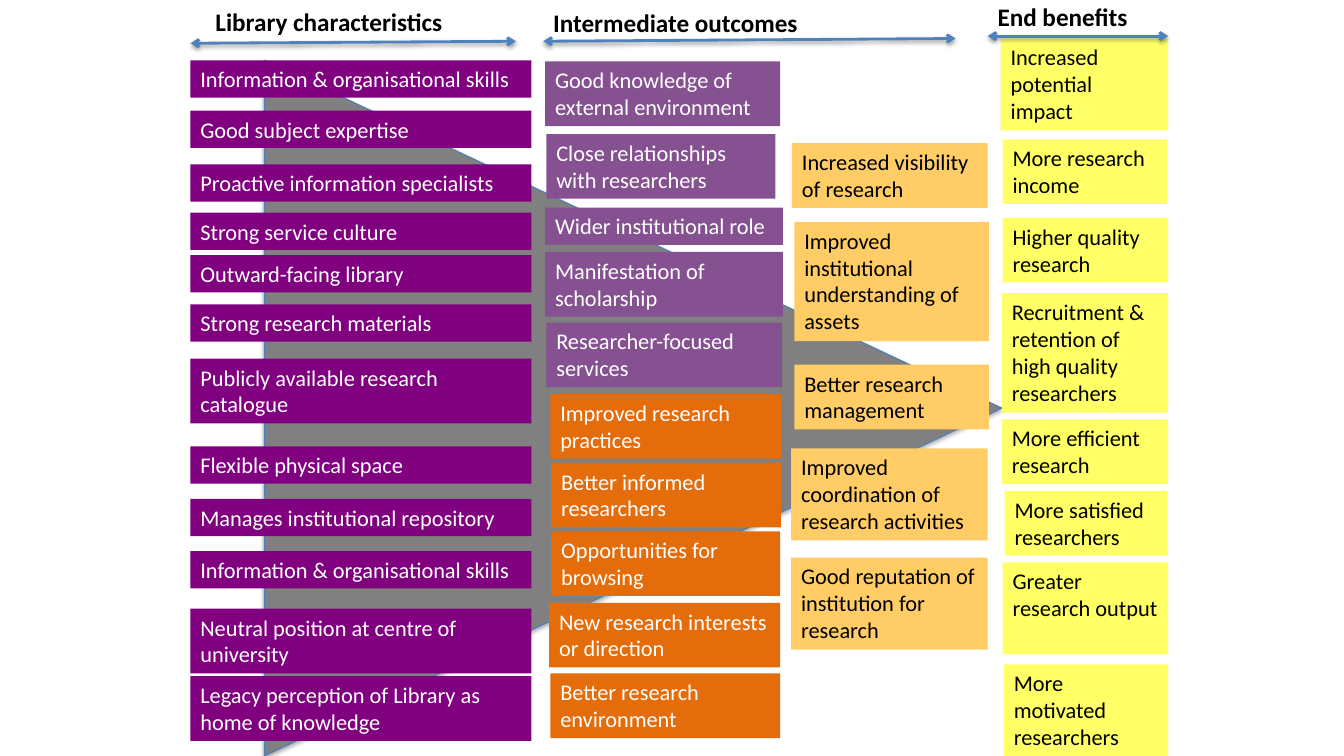
from pptx import Presentation
from pptx.dml.color import RGBColor
from pptx.enum.shapes import MSO_CONNECTOR as LINE, MSO_SHAPE as SHAPE
from pptx.enum.text import MSO_ANCHOR as ANCHOR, MSO_AUTO_SIZE as FIT, PP_ALIGN as ALIGN
from pptx.oxml import parse_xml
from pptx.oxml.ns import nsdecls
from pptx.util import Cm, Pt

PURPLE = RGBColor(0x80, 0x00, 0x80)
VIOLET = RGBColor(0x86, 0x51, 0x91)
ORANGE = RGBColor(0xE4, 0x6C, 0x0A)
AMBER = RGBColor(0xFF, 0xCC, 0x66)
YELLOW = RGBColor(0xFF, 0xFF, 0x66)
GREY = RGBColor(0x80, 0x80, 0x80)
OUTLINE = RGBColor(0x4B, 0x7E, 0xBC)
BLUE = RGBColor(0x4F, 0x81, 0xBD)
WHITE = RGBColor(0xFF, 0xFF, 0xFF)
BLACK = RGBColor(0x00, 0x00, 0x00)

LIBRARY_LEFT, LIBRARY_WIDTH = 4.8, 8.59
LIBRARY = [
    ("Information & organisational skills", 1.52, 1),
    ("Good subject expertise", 2.79, 1),
    ("Proactive information specialists", 4.14, 1),
    ("Strong service culture", 5.36, 1),
    ("Outward-facing library", 6.43, 1),
    ("Strong research materials", 7.67, 1),
    ("Publicly available research catalogue", 9.04, 2),
    ("Flexible physical space", 11.25, 1),
    ("Manages institutional repository", 12.57, 1),
    ("Information & organisational skills", 13.89, 1),
    ("Neutral position at centre of university", 15.34, 2),
    ("Legacy perception of Library as home of knowledge", 17.04, 2),
]
RELATIONSHIPS = [
    ("Good knowledge of external environment", 13.74, 1.55, 5.92, 2),
    ("Close relationships with researchers", 13.77, 3.38, 5.77, 2),
    ("Wider institutional role", 13.74, 5.23, 5.99, 1),
    ("Manifestation of scholarship", 13.74, 6.35, 5.99, 2),
    ("Researcher-focused services", 13.77, 8.13, 5.94, 2),
]
PRACTICES = [
    ("Improved research practices", 13.87, 9.93, 5.82, 2),
    ("Better informed researchers", 13.89, 11.66, 5.79, 2),
    ("Opportunities for browsing", 13.89, 13.39, 5.77, 2),
    ("New research interests or direction", 13.84, 15.19, 5.82, 2),
    ("Better research environment", 13.87, 16.97, 5.79, 2),
]
INSTITUTION = [
    ("Increased visibility of research", 19.96, 3.61, 4.93, 2),
    ("Improved institutional understanding of assets", 20.02, 5.59, 4.9, 4),
    ("Better research management", 20.02, 9.19, 4.9, 2),
    ("Improved coordination of research activities", 19.94, 11.3, 4.95, 3),
    ("Good reputation of institution for research", 19.94, 14.05, 4.95, 3),
]
BENEFITS = [
    ("Increased potential impact", 25.22, 0.97, 4.22, 3),
    ("More research income", 25.27, 3.51, 4.14, 2),
    ("Higher quality research", 25.27, 5.49, 4.17, 2),
    ("Recruitment & retention of high quality researchers", 25.25, 7.39, 4.19, 4),
    ("More efficient research", 25.25, 10.57, 4.19, 2),
    ("More satisfied researchers", 25.32, 12.37, 4.11, 2),
    ("Greater research output", 25.27, 14.17, 4.17, 3),
    ("More motivated researchers", 25.3, 16.74, 4.14, 3),
]
HEADINGS = [
    ("Library characteristics", 5.18, 0.03, 6.32),
    ("Intermediate outcomes", 13.69, 0.05, 6.78),
    ("End benefits", 24.89, -0.08, 3.84),
]
SPANS = [
    (4.8, 1.09, 13, 1.04),
    (13.69, 1.04, 24.08, 0.97),
    (24.89, 0.91, 29.44, 0.91),
]


class OutcomeMap:
    box_format = {"name": "Calibri", "size": Pt(16), "bold": False}
    heading_format = {"name": "Calibri", "size": Pt(18), "bold": True}
    first_line, next_line = 0.94, 0.69

    def __init__(self, slide):
        self.shapes = slide.shapes

    def set_text(self, frame, text, color, formats, wrap):
        frame_format = {"word_wrap": wrap, "auto_size": FIT.NONE, "vertical_anchor": ANCHOR.TOP}
        for name, value in frame_format.items():
            setattr(frame, name, value)
        paragraph = frame.paragraphs[0]
        paragraph.alignment = ALIGN.LEFT
        run = paragraph.add_run()
        run.text = text
        for name, value in formats.items():
            setattr(run.font, name, value)
        run.font.color.rgb = color

    def cast_shadow(self, shape, distance, opacity):
        shape._element.spPr.append(parse_xml(
            f'<a:effectLst {nsdecls("a")}>'
            f'<a:outerShdw blurRad="{Pt(3.1)}" dist="{Pt(distance)}" dir="5400000" rotWithShape="0">'
            f'<a:srgbClr val="000000"><a:alpha val="{opacity * 1000}"/></a:srgbClr>'
            '</a:outerShdw></a:effectLst>'))

    def triangle(self, left, top, width, height):
        funnel = self.shapes.add_shape(
            SHAPE.ISOSCELES_TRIANGLE, Cm(left), Cm(top), Cm(width), Cm(height))
        funnel.rotation = 90
        funnel.fill.solid()
        funnel.fill.fore_color.rgb = GREY
        funnel.line.color.rgb = OUTLINE
        funnel.line.width = Pt(0.75)
        self.cast_shadow(funnel, 1.8, 35)

    def box(self, text, left, top, width, lines, fill, color):
        height = self.first_line + self.next_line * (lines - 1)
        item = self.shapes.add_shape(SHAPE.RECTANGLE, Cm(left), Cm(top), Cm(width), Cm(height))
        item.shadow.inherit = False
        item.fill.solid()
        item.fill.fore_color.rgb = fill
        item.line.fill.background()
        self.set_text(item.text_frame, text, color, self.box_format, True)

    def heading(self, text, left, top, width):
        label = self.shapes.add_textbox(Cm(left), Cm(top), Cm(width), Cm(1.02))
        self.set_text(label.text_frame, text, BLACK, self.heading_format, False)

    def span(self, *ends):
        arrow = self.shapes.add_connector(LINE.STRAIGHT, *map(Cm, ends))
        arrow.line.color.rgb = BLUE
        arrow.line.width = Pt(2)
        for end in ("headEnd", "tailEnd"):
            arrow.line._get_or_add_ln().append(
                parse_xml(f'<a:{end} {nsdecls("a")} type="arrow"/>'))
        self.cast_shadow(arrow, 1.6, 38)


def main():
    deck = Presentation()
    deck.slide_width, deck.slide_height = Cm(33.87), Cm(19.05)
    outcomes = OutcomeMap(deck.slides.add_slide(deck.slide_layouts[6]))
    outcomes.triangle(7.19, 0.99, 17.53, 18.59)
    library = [(text, LIBRARY_LEFT, top, LIBRARY_WIDTH, lines) for text, top, lines in LIBRARY]
    groups = [
        (library, PURPLE, WHITE),
        (RELATIONSHIPS, VIOLET, WHITE),
        (PRACTICES, ORANGE, WHITE),
        (INSTITUTION, AMBER, BLACK),
        (BENEFITS, YELLOW, BLACK),
    ]
    for items, fill, color in groups:
        for item in items:
            outcomes.box(*item, fill, color)
    for heading in HEADINGS:
        outcomes.heading(*heading)
    for ends in SPANS:
        outcomes.span(*ends)
    deck.save("out.pptx")


if __name__ == "__main__":
    main()
